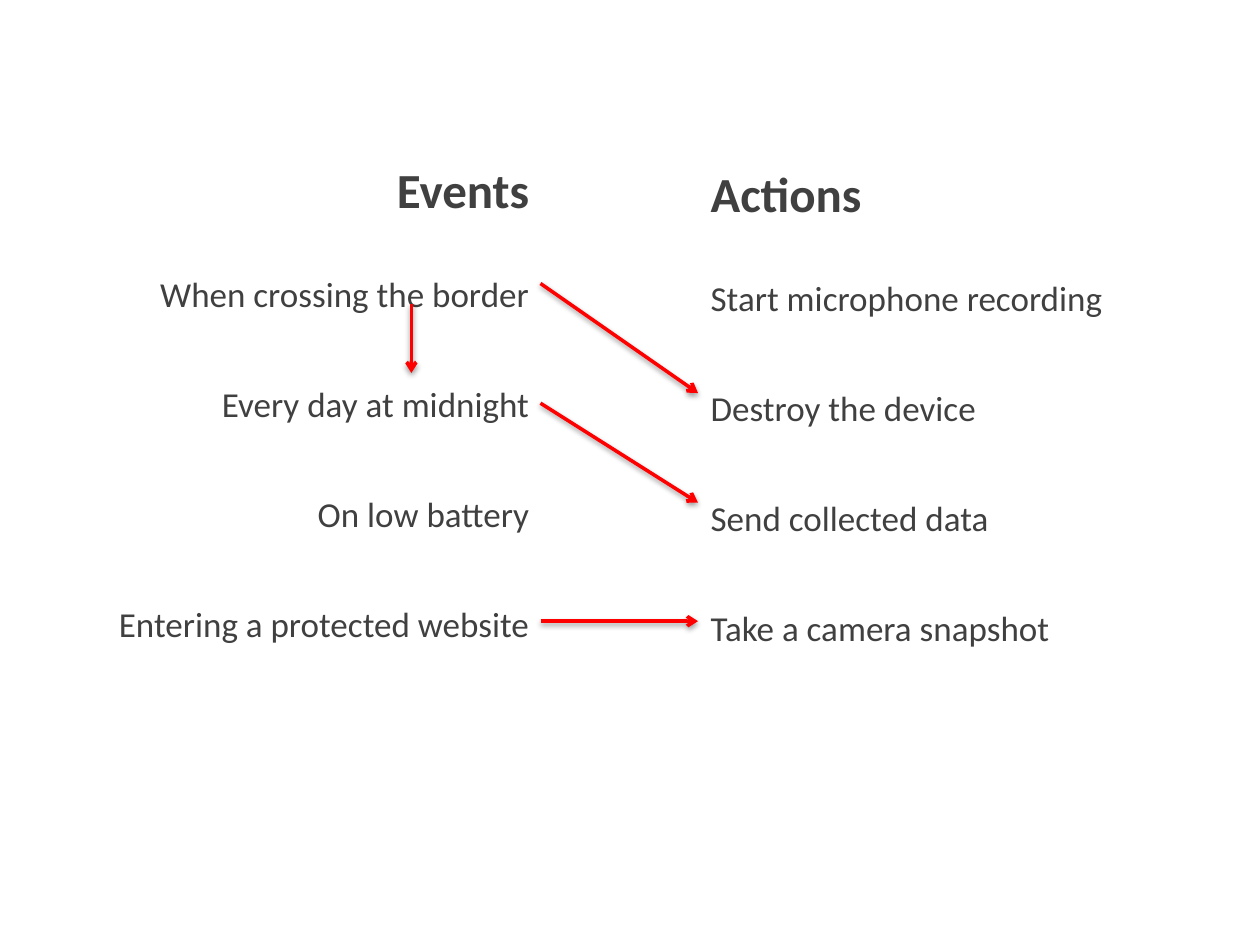
from dataclasses import dataclass

import pptx
import pptx.dml.color
import pptx.enum.shapes
import pptx.enum.text
import pptx.oxml
import pptx.oxml.ns
import pptx.util

ALIGN = pptx.enum.text.PP_ALIGN
COLUMNS, ROWS = 10, 7.5


@dataclass(frozen=True)
class Theme:
    font: str = "Calibri"
    ink: str = "404040"
    arrow: str = "FF0000"
    heading_size: int = 28
    item_size: int = 20
    first_gap: float = 33
    item_gap: float = 41.3
    line_spacing: float = 0.9
    arrow_width: float = 2


@dataclass(frozen=True)
class Box:
    """A region in grid columns and rows."""
    left: float
    top: float
    width: float
    height: float


THEME = Theme()

EVENTS = ["When crossing the border", "Every day at midnight",
          "On low battery", "Entering a protected website"]
ACTIONS = ["Start microphone recording", "Destroy the device",
           "Send collected data", "Take a camera snapshot"]

# Ends of each arrow: share of the gutter's width, rows below its top
LINKS = [((0, 0), (1, 0.87)),
         ((0, 2.68), (1, 2.68)),
         ((-0.82, 0.16), (-0.82, 0.71)),
         ((0, 0.95), (1, 1.74))]

SHADOW = (
    '<a:effectLst %s><a:outerShdw blurRad="40000" dist="20000" dir="5400000" '
    'rotWithShape="0"><a:srgbClr val="000000"><a:alpha val="38000"/></a:srgbClr>'
    '</a:outerShdw></a:effectLst>' % pptx.oxml.ns.nsdecls("a"))
ARROWHEAD = '<a:tailEnd %s type="arrow"/>' % pptx.oxml.ns.nsdecls("a")
NO_BULLET = '<a:buNone %s/>' % pptx.oxml.ns.nsdecls("a")


def apply(target, values):
    for name, value in values.items():
        setattr(target, name, value)


def grid_x(columns, deck):
    return round(deck.slide_width * columns / COLUMNS)


def grid_y(rows, deck):
    return round(deck.slide_height * rows / ROWS)


def fill_column(deck, holder, box, heading, items, alignment):
    """Fill a body placeholder with a bold heading and spaced items."""
    apply(holder, {"left": grid_x(box.left, deck), "top": grid_y(box.top, deck),
                   "width": grid_x(box.width, deck),
                   "height": grid_y(box.height, deck)})
    frame = holder.text_frame
    apply(frame, {"word_wrap": True, "margin_top": 0,
                  "auto_size": pptx.enum.text.MSO_AUTO_SIZE.NONE,
                  "vertical_anchor": pptx.enum.text.MSO_ANCHOR.TOP})
    for index, words in enumerate([heading, *items]):
        para = frame.paragraphs[0] if index == 0 else frame.add_paragraph()
        properties = para._p.get_or_add_pPr()
        properties.set("marL", "0")
        properties.set("indent", "0")
        properties.append(pptx.oxml.parse_xml(NO_BULLET))
        gap = (0, THEME.first_gap)[index] if index < 2 else THEME.item_gap
        apply(para, {"alignment": alignment, "line_spacing": THEME.line_spacing,
                     "space_before": pptx.util.Pt(gap),
                     "space_after": pptx.util.Pt(0)})
        span = para.add_run()
        span.text = words
        size = THEME.item_size if index else THEME.heading_size
        apply(span.font, {"name": THEME.font, "bold": index == 0,
                          "size": pptx.util.Pt(size)})
        span.font.color.rgb = pptx.dml.color.RGBColor.from_string(THEME.ink)


def draw_links(deck, page, gutter, links):
    """Draw the arrows, measured from the gutter between the columns."""
    for ends in links:
        points = []
        for share, rows in ends:
            points += [grid_x(gutter.left + share * gutter.width, deck),
                       grid_y(gutter.top + rows, deck)]
        arrow = page.shapes.add_connector(
            pptx.enum.shapes.MSO_CONNECTOR.STRAIGHT, *points)
        arrow.line.width = pptx.util.Pt(THEME.arrow_width)
        arrow.line.color.rgb = pptx.dml.color.RGBColor.from_string(THEME.arrow)
        arrow.line._get_or_add_ln().append(pptx.oxml.parse_xml(ARROWHEAD))
        arrow._element.spPr.append(pptx.oxml.parse_xml(SHADOW))


def build_matching_slide(deck):
    page = deck.slides.add_slide(deck.slide_layouts.get_by_name("Two Content"))
    title = page.shapes.title._element
    title.getparent().remove(title)
    fill_column(deck, page.placeholders[1], Box(0.67, 1.32, 3.63, 4.83),
                "Events", EVENTS, ALIGN.RIGHT)
    fill_column(deck, page.placeholders[2], Box(5.54, 1.35, 4.42, 4.83),
                "Actions", ACTIONS, ALIGN.LEFT)
    draw_links(deck, page, Box(4.29, 2.25, 1.25, 2.68), LINKS)


def main():
    deck = pptx.Presentation()
    apply(deck, {"slide_width": pptx.util.Inches(10),
                 "slide_height": pptx.util.Inches(7.5)})
    build_matching_slide(deck)
    deck.save("out.pptx")


if __name__ == "__main__":
    main()
